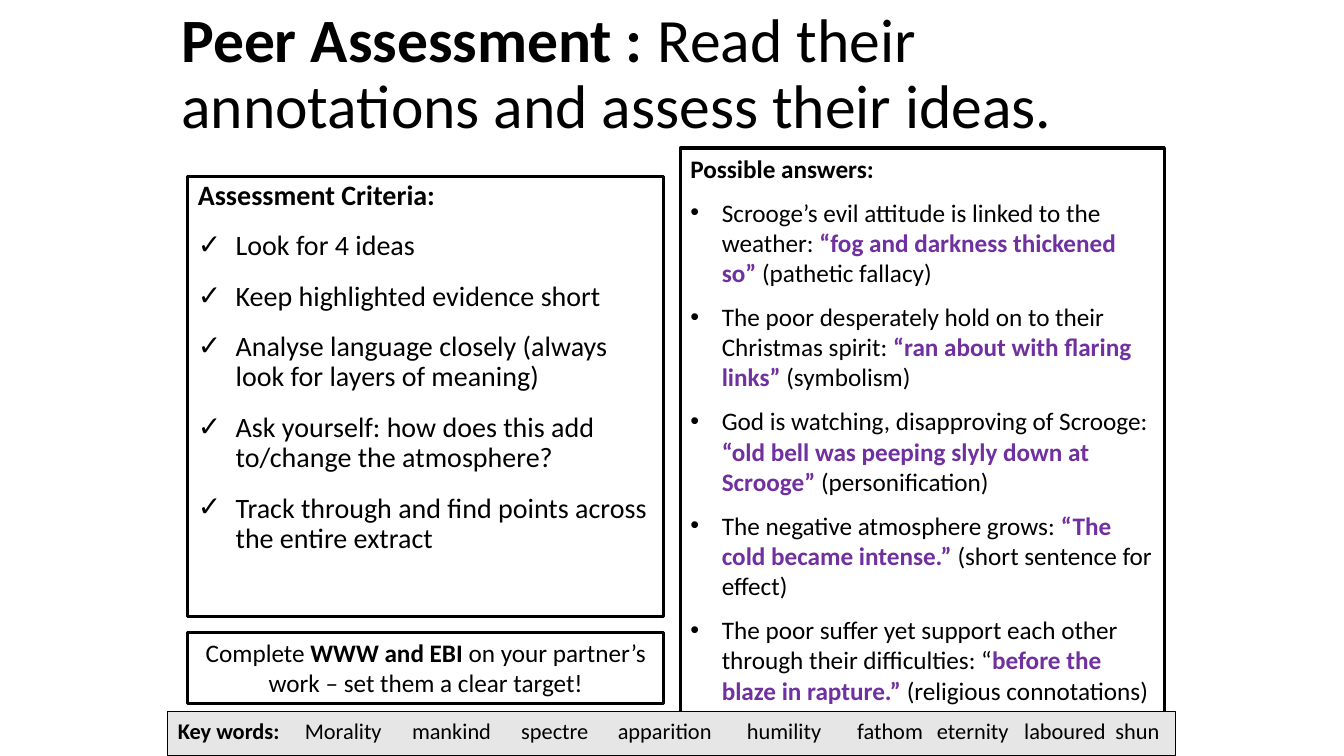
from dataclasses import dataclass
from typing import NamedTuple

from lxml.etree import SubElement
from pptx import Presentation
from pptx.dml.color import RGBColor
from pptx.enum.shapes import MSO_SHAPE
from pptx.enum.text import MSO_ANCHOR, MSO_AUTO_SIZE, PP_ALIGN
from pptx.oxml.ns import qn
from pptx.util import Emu, Pt

EMU_PER_PX = 9525
FONT = "Calibri"
BLACK, WHITE, GREY, PURPLE = "000000", "FFFFFF", "E7E6E6", "7030A0"


class Span(NamedTuple):
    text: str
    bold: bool = False
    color: str = BLACK


class Bullet(NamedTuple):
    character: str
    indent: int


@dataclass
class Line:
    spans: list[Span]
    bullet: Bullet | None = None


@dataclass
class Panel:
    left: int
    top: int
    width: int
    height: int
    lines: list[Line]
    size: int
    gap: float = 0
    line_spacing: float = 1.0
    align: PP_ALIGN = PP_ALIGN.LEFT
    fill: str = WHITE
    border: float = 2.25


def px(length: int) -> Emu:
    return Emu(length * EMU_PER_PX)


def rgb(color: str) -> RGBColor:
    return RGBColor.from_string(color)


def place(shape, left: int, top: int, width: int, height: int) -> None:
    shape.left, shape.top = px(left), px(top)
    shape.width, shape.height = px(width), px(height)


def write_spans(paragraph, spans: list[Span], size: int) -> None:
    for span in spans:
        run = paragraph.add_run()
        run.text = span.text
        run.font.name = FONT
        run.font.size = Pt(size)
        run.font.bold = span.bold
        run.font.color.rgb = rgb(span.color)


def add_bullet(paragraph, bullet: Bullet) -> None:
    properties = paragraph._p.get_or_add_pPr()
    properties.set("marL", str(px(bullet.indent)))
    properties.set("indent", str(-px(bullet.indent)))
    SubElement(properties, qn("a:buFont")).set("typeface", "Arial")
    SubElement(properties, qn("a:buChar")).set("char", bullet.character)


def add_tabs(paragraph, stops: list[int]) -> None:
    tab_list = SubElement(paragraph._p.get_or_add_pPr(), qn("a:tabLst"))
    for stop in stops:
        tab = SubElement(tab_list, qn("a:tab"))
        tab.set("pos", str(px(stop)))
        tab.set("algn", "l")


def draw_panel(slide, panel: Panel):
    shape = slide.shapes.add_shape(MSO_SHAPE.RECTANGLE, 0, 0, 0, 0)
    place(shape, panel.left, panel.top, panel.width, panel.height)
    shape.shadow.inherit = False
    shape.fill.solid()
    shape.fill.fore_color.rgb = rgb(panel.fill)
    shape.line.color.rgb = rgb(BLACK)
    shape.line.width = Pt(panel.border)
    frame = shape.text_frame
    frame.word_wrap = True
    frame.vertical_anchor = MSO_ANCHOR.TOP
    for index, line in enumerate(panel.lines):
        paragraph = frame.add_paragraph() if index else frame.paragraphs[0]
        if line.bullet:
            add_bullet(paragraph, line.bullet)
        paragraph.alignment = panel.align
        paragraph.line_spacing = panel.line_spacing
        if index:
            paragraph.space_before = Pt(panel.gap)
        write_spans(paragraph, line.spans, panel.size)
    return shape


def quoted(opening: str, quote: str, closing: str) -> Line:
    spans = [Span(opening), Span(quote, True, PURPLE), Span(closing)]
    return Line(spans, Bullet("•", 30))


CRITERIA = [
    "Look for 4 ideas",
    "Keep highlighted evidence short",
    "Analyse language closely (always look for layers of meaning)",
    "Ask yourself: how does this add to/change the atmosphere?",
    "Track through and find points across the entire extract",
]
ANSWERS = [
    quoted("Scrooge’s evil attitude is linked to the weather: ",
           "“fog and darkness thickened so”", " (pathetic fallacy)"),
    quoted("The poor desperately hold on to their Christmas spirit: ",
           "“ran about with flaring links” ", "(symbolism)"),
    quoted("God is watching, disapproving of Scrooge: ",
           "“old bell was peeping slyly down at Scrooge” ", "(personification)"),
    quoted("The negative atmosphere grows: ",
           "“The cold became intense.”", " (short sentence for effect)"),
    quoted("The poor suffer yet support each other through their difficulties: “",
           "before the blaze in rapture.” ", "(religious connotations)"),
]
# Each key word with its tab stop
KEY_WORDS = {
    "Morality": 121, "mankind": 223, "spectre": 327, "apparition": 419,
    "humility": 542, "fathom": 647, "eternity": 723, "laboured": 806, "shun": 893,
}


def main() -> None:
    presentation = Presentation()
    presentation.slide_width, presentation.slide_height = px(1280), px(720)
    slide = presentation.slides.add_slide(presentation.slide_layouts[5])

    # Title
    title = slide.shapes.title
    place(title, 163, 3, 946, 138)
    title.text_frame.word_wrap = True
    title.text_frame.auto_size = MSO_AUTO_SIZE.NONE
    title.text_frame.vertical_anchor = MSO_ANCHOR.MIDDLE
    heading = title.text_frame.paragraphs[0]
    heading.alignment = PP_ALIGN.LEFT
    heading.line_spacing = 0.9
    write_spans(heading, [Span("Peer Assessment : ", True),
                          Span("Read their annotations and assess their ideas.")], 44)

    # Assessment criteria
    criteria = [Line([Span("Assessment Criteria:", True)])]
    criteria += [Line([Span(text)], Bullet("✓", 36)) for text in CRITERIA]
    draw_panel(slide, Panel(179, 168, 453, 419, criteria, 20, gap=14.4, line_spacing=0.9))

    # Target for the partner
    target = Line([Span("Complete "), Span("WWW and EBI ", True),
                   Span("on your partner’s work – set them a clear target!")])
    draw_panel(slide, Panel(179, 602, 453, 68, [target], 18, align=PP_ALIGN.CENTER))

    # Possible answers
    answers = [Line([Span("Possible answers:", True)]), *ANSWERS]
    draw_panel(slide, Panel(648, 141, 461, 540, answers, 18, gap=9.75))

    # Key words bar
    words = Line([Span("Key words:", True), Span("\t" + "\t".join(KEY_WORDS))])
    bar = draw_panel(slide, Panel(160, 678, 960, 42, [words], 16, fill=GREY, border=0.75))
    add_tabs(bar.text_frame.paragraphs[0], list(KEY_WORDS.values()))

    presentation.save("out.pptx")


if __name__ == "__main__":
    main()
